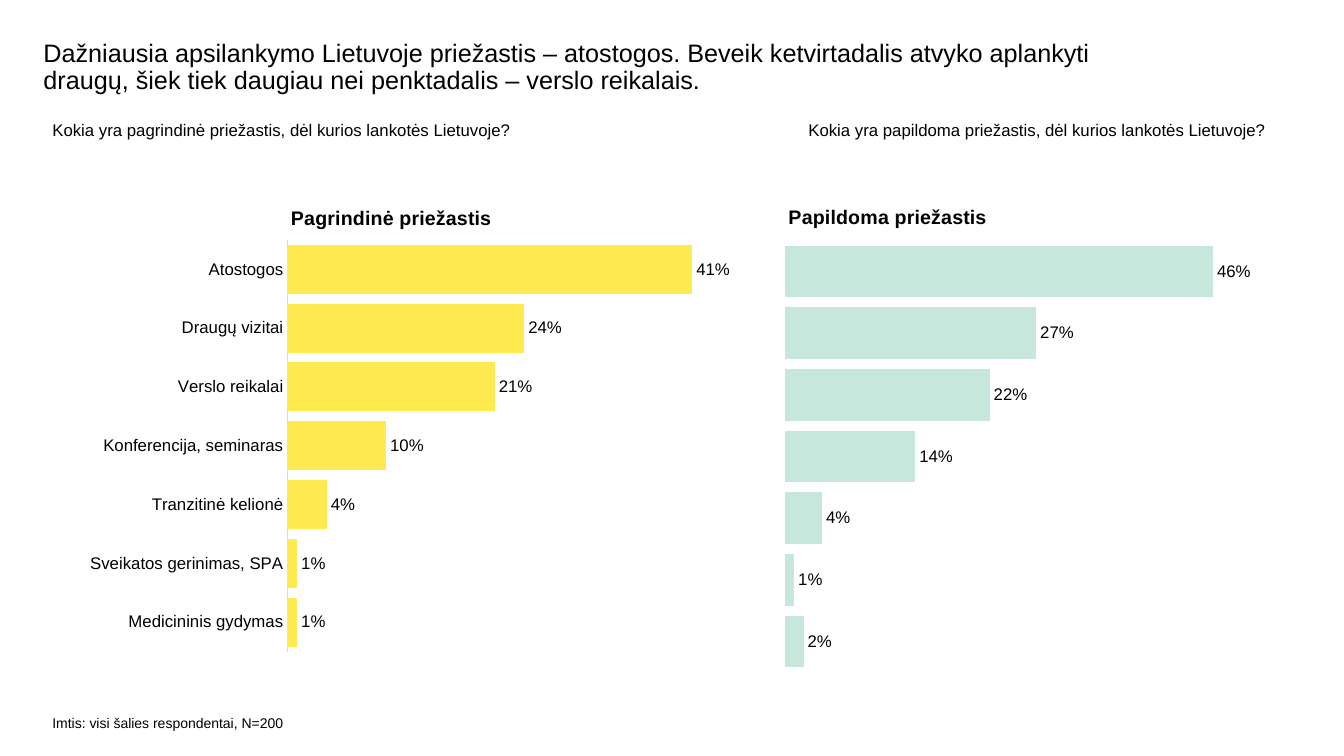
"""Build the slide on reasons for visiting Lithuania."""
from lxml.etree import SubElement
from pptx import Presentation
from pptx.chart.data import CategoryChartData as ChartData
from pptx.dml.color import RGBColor as RGB
from pptx.enum.chart import XL_CHART_TYPE as CT, XL_LABEL_POSITION as LP, XL_TICK_MARK as TM
from pptx.enum.text import MSO_ANCHOR as Anchor, PP_ALIGN as Align
from pptx.oxml.ns import qn
from pptx.util import Pt

TITLE = ("Dažniausia apsilankymo Lietuvoje priežastis – atostogos. Beveik ketvirtadalis "
         "atvyko aplankyti draugų, šiek tiek daugiau nei penktadalis – verslo reikalais.")
QUESTIONS = ["Kokia yra pagrindinė priežastis, dėl kurios lankotės Lietuvoje?",
             "Kokia yra papildoma priežastis, dėl kurios lankotės Lietuvoje?"]
SAMPLE = "Imtis: visi šalies respondentai, N=200"
REASONS = ["Medicininis gydymas", "Sveikatos gerinimas, SPA", "Tranzitinė kelionė",
           "Konferencija, seminaras", "Verslo reikalai", "Draugų vizitai", "Atostogos"]
CHARTS = [
    {"title": "Pagrindinė priežastis", "values": [0.01, 0.01, 0.04, 0.1, 0.21, 0.24, 0.41],
     "color": "main", "box": (56.2, 130.3, 481, 342), "labelled": True, "max": 0.45,
     "title_at": (0.31, 0.04), "plot": (0.31, 0.12, 0.66, 0.86)},
    {"title": "Papildoma priežastis", "values": [0.02, 0.01, 0.04, 0.14, 0.22, 0.27, 0.46],
     "color": "extra", "box": (553.7, 128.9, 350, 358.6), "labelled": False, "max": 0.5,
     "title_at": (0.02, 0.04), "plot": (0.02, 0.12, 0.95, 0.86)},
]
THEME = {"font": "Arial", "text": RGB(0, 0, 0), "axis": RGB(0xD9, 0xD9, 0xD9),
         "main": RGB(0xFF, 0xEB, 0x50), "extra": RGB(0xC7, 0xE6, 0xDC),
         "title": 18, "heading": 14, "body": 12, "note": 10}


def assign(obj, **values):
    for name, value in values.items():
        setattr(obj, name, value)


def style(font, size, bold=False):
    assign(font, name=THEME["font"], size=Pt(THEME[size]), bold=bold)
    font.color.rgb = THEME["text"]


def write(s, box, text, size, spacing=1.0, tab=None):
    assign(s, **dict(zip(("left", "top", "width", "height"), map(Pt, box))))
    tf = s.text_frame
    assign(tf, word_wrap=True, vertical_anchor=Anchor.TOP,
           margin_left=0, margin_top=0, margin_right=0, margin_bottom=0)
    p = tf.paragraphs[0]
    assign(p, alignment=Align.LEFT, line_spacing=spacing)
    if tab:
        tabs = SubElement(p._p.get_or_add_pPr(), qn("a:tabLst"))
        SubElement(tabs, qn("a:tab"), pos=str(Pt(tab)), algn="l")
    r = p.add_run()
    r.text = text
    style(r.font, size)


def place(element, position, inner=False):
    layout = element.find(qn("c:layout"))
    if layout is None:
        layout = SubElement(element, qn("c:layout"))
        anchor = element.find(qn("c:tx"))
        if anchor is None:
            element.insert(0, layout)
        else:
            anchor.addnext(layout)
    manual = SubElement(layout, qn("c:manualLayout"))
    if inner:
        SubElement(manual, qn("c:layoutTarget"), val="inner")
    for axis in "xy":
        SubElement(manual, qn(f"c:{axis}Mode"), val="edge")
    for axis, value in zip("xywh", position):
        SubElement(manual, qn(f"c:{axis}"), val=str(value))


def add_bars(slide, item):
    data = ChartData(number_format="0%")
    data.categories = REASONS if item["labelled"] else [str(i + 1) for i in range(len(REASONS))]
    data.add_series("Series 1", item["values"])
    chart = slide.shapes.add_chart(CT.BAR_CLUSTERED, *map(Pt, item["box"]), data).chart
    style(chart.font, "body")
    assign(chart, has_legend=False, has_title=True)
    r = chart.chart_title.text_frame.paragraphs[0].add_run()
    r.text = item["title"]
    style(r.font, "heading", True)
    chart.chart_title.include_in_layout = False
    place(chart.chart_title._element, item["title_at"])
    place(chart._chartSpace.chart.plotArea, item["plot"], inner=True)
    assign(chart.value_axis, visible=False, has_major_gridlines=False,
           minimum_scale=0, maximum_scale=item["max"])
    axis = chart.category_axis
    assign(axis, visible=item["labelled"], has_major_gridlines=False, major_tick_mark=TM.NONE)
    if item["labelled"]:
        style(axis.tick_labels.font, "body")
        axis.format.line.width = Pt(0.75)
        axis.format.line.color.rgb = THEME["axis"]
    plot = chart.plots[0]
    assign(plot, gap_width=20, vary_by_categories=False, has_data_labels=True)
    assign(plot.data_labels, show_value=True, position=LP.OUTSIDE_END,
           number_format="0%", number_format_is_linked=False)
    style(plot.data_labels.font, "body")
    fill = plot.series[0].format.fill
    fill.solid()
    fill.fore_color.rgb = THEME[item["color"]]


def main():
    prs = Presentation()
    assign(prs, slide_width=Pt(960), slide_height=Pt(540))
    slide = prs.slides.add_slide(prs.slide_layouts[5])
    write(slide.shapes.title, (31, 28.8, 810, 43.2), TITLE, "title", spacing=0.9)
    note = (37.4, 510.5, 182, 17.3)
    write(slide.shapes.add_textbox(*map(Pt, note)), note, SAMPLE, "note")
    for item in CHARTS:
        add_bars(slide, item)
    ask = (37.4, 85.7, 885, 43.9)
    write(slide.shapes.add_textbox(*map(Pt, ask)), ask, "\t".join(QUESTIONS), "body", tab=540)
    prs.save("out.pptx")


if __name__ == "__main__":
    main()
